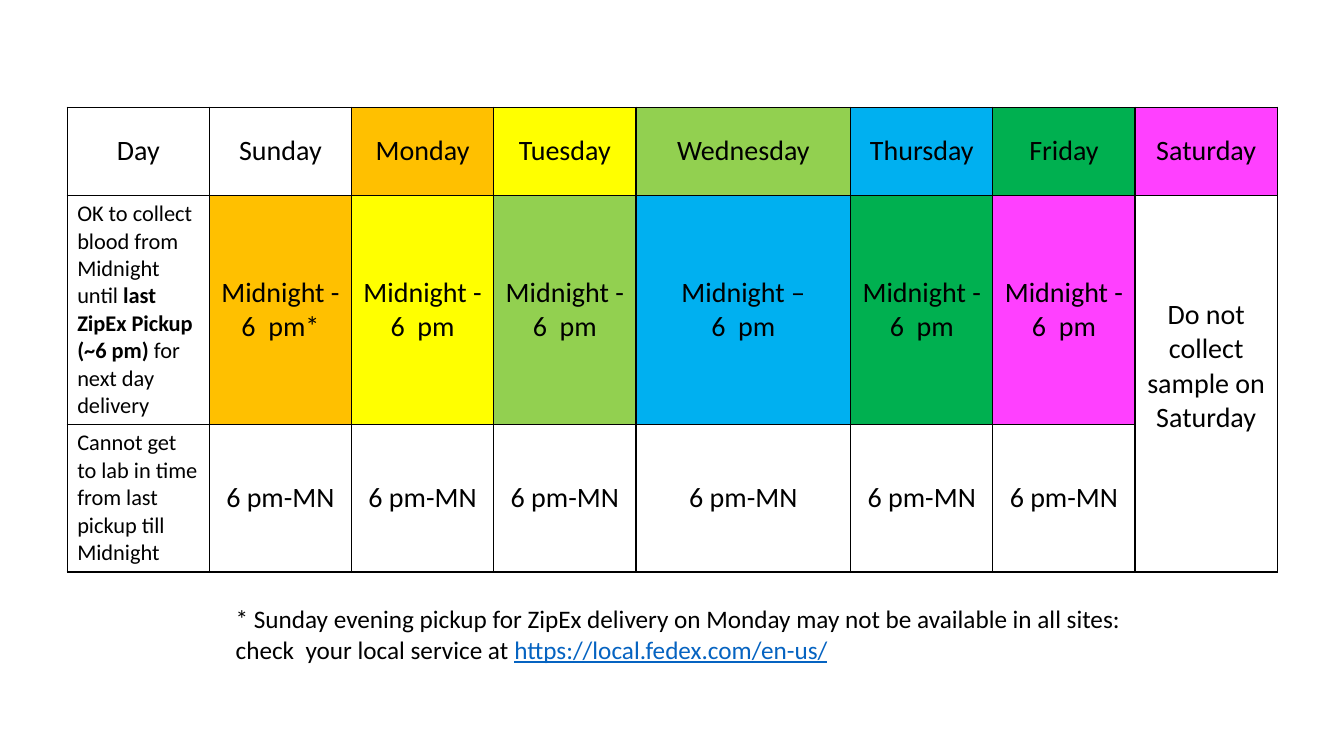
from dataclasses import dataclass, field

from lxml import etree
from pptx import Presentation
from pptx.dml.color import RGBColor
from pptx.enum.text import MSO_ANCHOR, PP_ALIGN
from pptx.oxml.ns import qn
from pptx.util import Inches, Pt

CENTER, LEFT = PP_ALIGN.CENTER, PP_ALIGN.LEFT
MIDDLE, TOP = MSO_ANCHOR.MIDDLE, MSO_ANCHOR.TOP
SLIDE_WIDTH, SLIDE_HEIGHT = Inches(13.33), Inches(7.5)
BLANK_LAYOUT = 6

COLORS = {
    "ink": "000000", "plain": "FFFFFF", "link": "0563C1",
    "Monday": "FFC000", "Tuesday": "FFFF00", "Wednesday": "92D050",
    "Thursday": "00B0F0", "Friday": "00B050", "Saturday": "FF40FF",
}
DAYS = ["Sunday", "Monday", "Tuesday", "Wednesday", "Thursday", "Friday", "Saturday"]
COLUMN_SHARES = [10.58, 10.58, 10.58, 10.58, 15.98, 10.58, 10.58, 10.58]
ROW_SHARES = [11.68, 30.3, 19.5]
ENTRY = {"size": Pt(20)}
LABEL = {"size": Pt(16)}
NOTE = {"size": Pt(18)}


@dataclass
class Span:
    text: str
    color: str = "ink"
    style: dict = field(default_factory=dict)


@dataclass
class Entry:
    paras: list[list[Span]]
    fill: str = "plain"
    style: dict = field(default_factory=lambda: ENTRY)
    align: PP_ALIGN = CENTER
    anchor: MSO_ANCHOR = MIDDLE


@dataclass
class Area:
    """Left, top, width and height as percentages of the slide."""
    left: float
    top: float
    width: float
    height: float

    def lengths(self) -> tuple[int, int, int, int]:
        return across(self.left), down(self.top), across(self.width), down(self.height)


def across(percent: float) -> int:
    return round(SLIDE_WIDTH * percent / 100)


def down(percent: float) -> int:
    return round(SLIDE_HEIGHT * percent / 100)


def rgb(name: str) -> RGBColor:
    return RGBColor.from_string(COLORS[name])


def write(frame, paras: list[list[Span]], style: dict, align: PP_ALIGN) -> None:
    frame.word_wrap = True
    for index, spans in enumerate(paras):
        para = frame.add_paragraph() if index else frame.paragraphs[0]
        para.alignment = align
        for span in spans:
            run = para.add_run()
            run.text = span.text
            for name, value in ({"name": "Calibri", "bold": False} | style | span.style).items():
                setattr(run.font, name, value)
            run.font.color.rgb = rgb(span.color)


def outline(cell) -> None:
    """Put a thin line on all four sides; lines come before the fill in the XML."""
    properties = cell._tc.get_or_add_tcPr()
    for index, side in enumerate(("a:lnL", "a:lnR", "a:lnT", "a:lnB")):
        line = etree.Element(qn(side), w=str(Pt(1)))
        solid = etree.SubElement(line, qn("a:solidFill"))
        etree.SubElement(solid, qn("a:srgbClr"), val=COLORS["ink"])
        properties.insert(index, line)


def fill_cell(cell, entry: Entry) -> None:
    cell.fill.solid()
    cell.fill.fore_color.rgb = rgb(entry.fill)
    cell.vertical_anchor = entry.anchor
    write(cell.text_frame, entry.paras, entry.style, entry.align)


def plain_entry(text: str, fill: str = "plain") -> Entry:
    return Entry([[Span(line)] for line in text.split("\n")], fill)


def label_entry(*spans: Span) -> Entry:
    return Entry([list(spans)], style=LABEL, align=LEFT, anchor=TOP)


def schedule_rows() -> list[list[Entry]]:
    """Each collection window takes the colour of the following day, when it arrives."""
    windows = {"Sunday": "Midnight - 6  pm*", "Wednesday": "Midnight –\n6  pm"}
    header = [plain_entry("Day")]
    header += [plain_entry(day, day if day in COLORS else "plain") for day in DAYS]
    collect = [label_entry(
        Span("OK to collect blood from Midnight until"),
        Span(" last ZipEx Pickup (~6 pm)", style={"bold": True}),
        Span(" for next day delivery"),
    )]
    collect += [plain_entry(windows.get(day, "Midnight - 6  pm"), arrival)
                for day, arrival in zip(DAYS, DAYS[1:])]
    collect.append(plain_entry("Do not collect sample on Saturday"))
    late = [label_entry(Span("Cannot get to lab in time from last pickup till Midnight"))]
    late += [plain_entry("6 pm-MN") for _ in DAYS[:-1]]
    return [header, collect, late]


def add_schedule(page) -> None:
    area = Area(5, 14.17, sum(COLUMN_SHARES), sum(ROW_SHARES))
    frame = page.shapes.add_table(len(ROW_SHARES), len(COLUMN_SHARES), *area.lengths())
    table = frame.table
    table.first_row = table.horz_banding = False
    for column, share in zip(table.columns, COLUMN_SHARES):
        column.width = across(share)
    for row, share in zip(table.rows, ROW_SHARES):
        row.height = down(share)
    for row_index, entries in enumerate(schedule_rows()):
        for column_index, entry in enumerate(entries):
            fill_cell(table.cell(row_index, column_index), entry)
    for cell in table.iter_cells():
        outline(cell)
    saturday = table.cell(1, len(DAYS))
    saturday.merge(table.cell(2, len(DAYS)))
    saturday.margin_bottom = down(5.2)


def add_note(page) -> None:
    box = page.shapes.add_textbox(*Area(16.8, 79.2, 68.64, 9.47).lengths())
    write(box.text_frame, [[
        Span("* Sunday evening pickup for ZipEx delivery on Monday may not be available "
             "in all sites: check  your local service at "),
        Span("https://local.fedex.com/en-us/", "link", {"underline": True}),
    ]], NOTE, LEFT)


def main() -> None:
    deck = Presentation()
    deck.slide_width, deck.slide_height = SLIDE_WIDTH, SLIDE_HEIGHT
    page = deck.slides.add_slide(deck.slide_layouts[BLANK_LAYOUT])
    add_schedule(page)
    add_note(page)
    deck.save("out.pptx")


if __name__ == "__main__":
    main()
